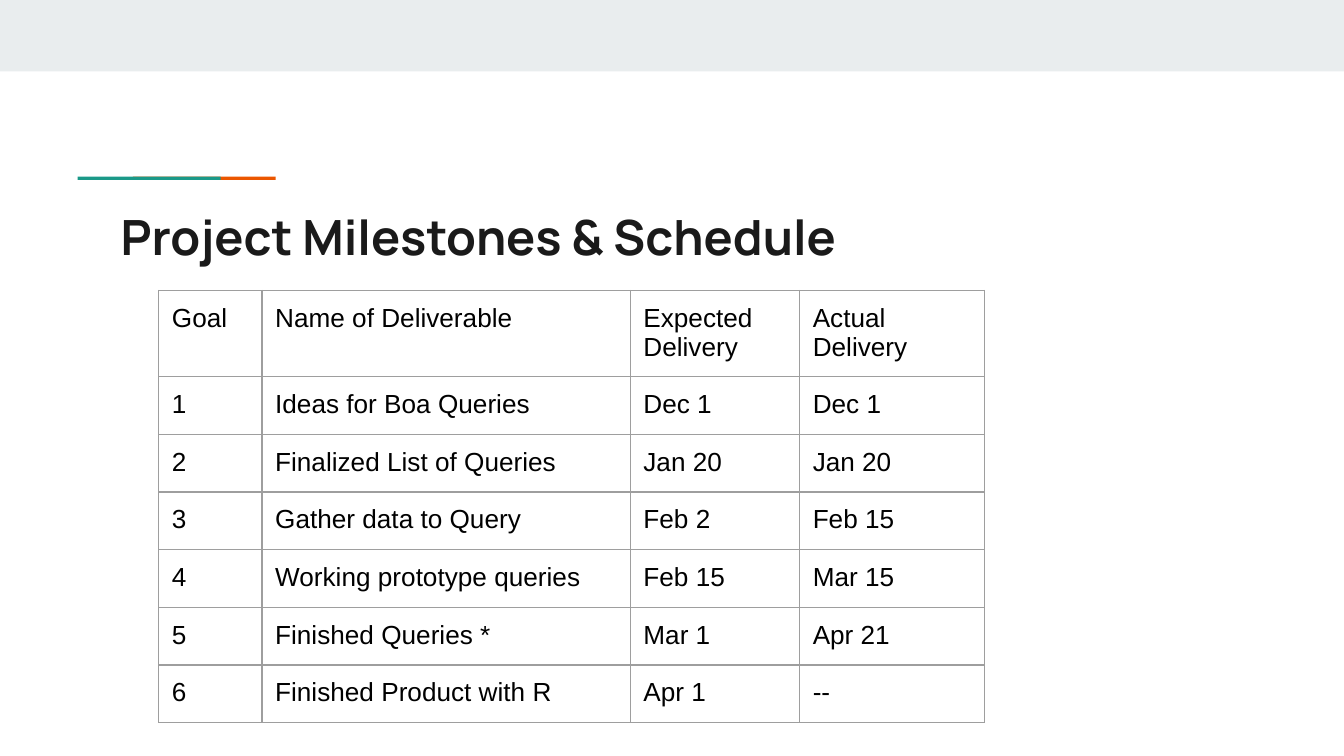
from dataclasses import dataclass

from lxml.etree import SubElement
from pptx import Presentation
from pptx.dml.color import RGBColor
from pptx.enum.shapes import MSO_SHAPE
from pptx.enum.text import MSO_ANCHOR, MSO_AUTO_SIZE, PP_ALIGN
from pptx.oxml.ns import qn
from pptx.util import Cm, Pt


@dataclass
class Bar:
    left: float
    top: float
    width: float
    height: float
    color: str


# Lengths in centimetres
PAD = 0.25
BARS = [
    Bar(0, 0, 25.4, 1.35, "E9EDEE"),
    Bar(2.51, 3.34, 2.7, 0.06, "EB5600"),
    Bar(1.47, 3.34, 2.7, 0.06, "1A9988"),
]
COLS = [1.95, 6.96, 3.2, 3.5]
HEAD, ROW = 1.63, 1.09
ROWS = [
    ("Goal", "Name of Deliverable", "Expected Delivery", "Actual Delivery"),
    ("1", "Ideas for Boa Queries", "Dec 1", "Dec 1"),
    ("2", "Finalized List of Queries", "Jan 20", "Jan 20"),
    ("3", "Gather data to Query", "Feb 2", "Feb 15"),
    ("4", "Working prototype queries", "Feb 15", "Mar 15"),
    ("5", "Finished Queries *", "Mar 1", "Apr 21"),
    ("6", "Finished Product with R", "Apr 1", "--"),
]


def paint(code: str) -> RGBColor:
    return RGBColor.from_string(code)


def write(frame, text: str, *, size: float, font: str, color: str,
          bold: bool = False) -> None:
    para = frame.paragraphs[0]
    para.alignment = PP_ALIGN.LEFT
    run = para.add_run()
    run.text = text
    run.font.size = Pt(size)
    run.font.name = font
    run.font.bold = bold
    run.font.color.rgb = paint(color)


def pad(box) -> None:
    box.margin_left = box.margin_right = Cm(PAD)
    box.margin_top = box.margin_bottom = Cm(PAD)


def draw_bar(slide, bar: Bar) -> None:
    shape = slide.shapes.add_shape(
        MSO_SHAPE.RECTANGLE, Cm(bar.left), Cm(bar.top),
        Cm(bar.width), Cm(bar.height))
    shape.shadow.inherit = False
    shape.fill.solid()
    shape.fill.fore_color.rgb = paint(bar.color)
    shape.line.fill.background()


def edge(cell, color: str, width: float) -> None:
    props = cell._tc.get_or_add_tcPr()
    for side in ("a:lnL", "a:lnR", "a:lnT", "a:lnB"):
        line = SubElement(props, qn(side), w=str(Pt(width)))
        fill = SubElement(line, qn("a:solidFill"))
        SubElement(fill, qn("a:srgbClr"), val=color)


def draw_table(slide, left: float, top: float) -> None:
    high = HEAD + ROW * (len(ROWS) - 1)
    table = slide.shapes.add_table(
        len(ROWS), len(COLS), Cm(left), Cm(top),
        Cm(sum(COLS)), Cm(high)).table
    table.first_row = table.horz_banding = False
    for col, width in zip(table.columns, COLS):
        col.width = Cm(width)
    for i, texts in enumerate(ROWS):
        table.rows[i].height = Cm(ROW if i else HEAD)
        for j, text in enumerate(texts):
            cell = table.cell(i, j)
            pad(cell)
            edge(cell, "9E9E9E", 0.75)
            cell.fill.background()
            write(cell.text_frame, text, size=14, font="Arial", color="000000")


def main() -> None:
    deck = Presentation()
    deck.slide_width, deck.slide_height = Cm(25.4), Cm(14.29)
    slide = deck.slides.add_slide(deck.slide_layouts[5])

    # Top band and accent rule
    for bar in BARS:
        draw_bar(slide, bar)

    # Title
    title = slide.shapes.title
    title.left, title.top = Cm(2.03), Cm(3.66)
    title.width, title.height = Cm(21.36), Cm(1.5)
    frame = title.text_frame
    frame.word_wrap = True
    frame.auto_size = MSO_AUTO_SIZE.NONE
    frame.vertical_anchor = MSO_ANCHOR.TOP
    pad(frame)
    write(frame, "Project Milestones & Schedule", size=26, font="Manrope",
          color="1A1A1A", bold=True)

    # Schedule
    draw_table(slide, 3, 5.49)
    deck.save("out.pptx")


if __name__ == "__main__":
    main()
